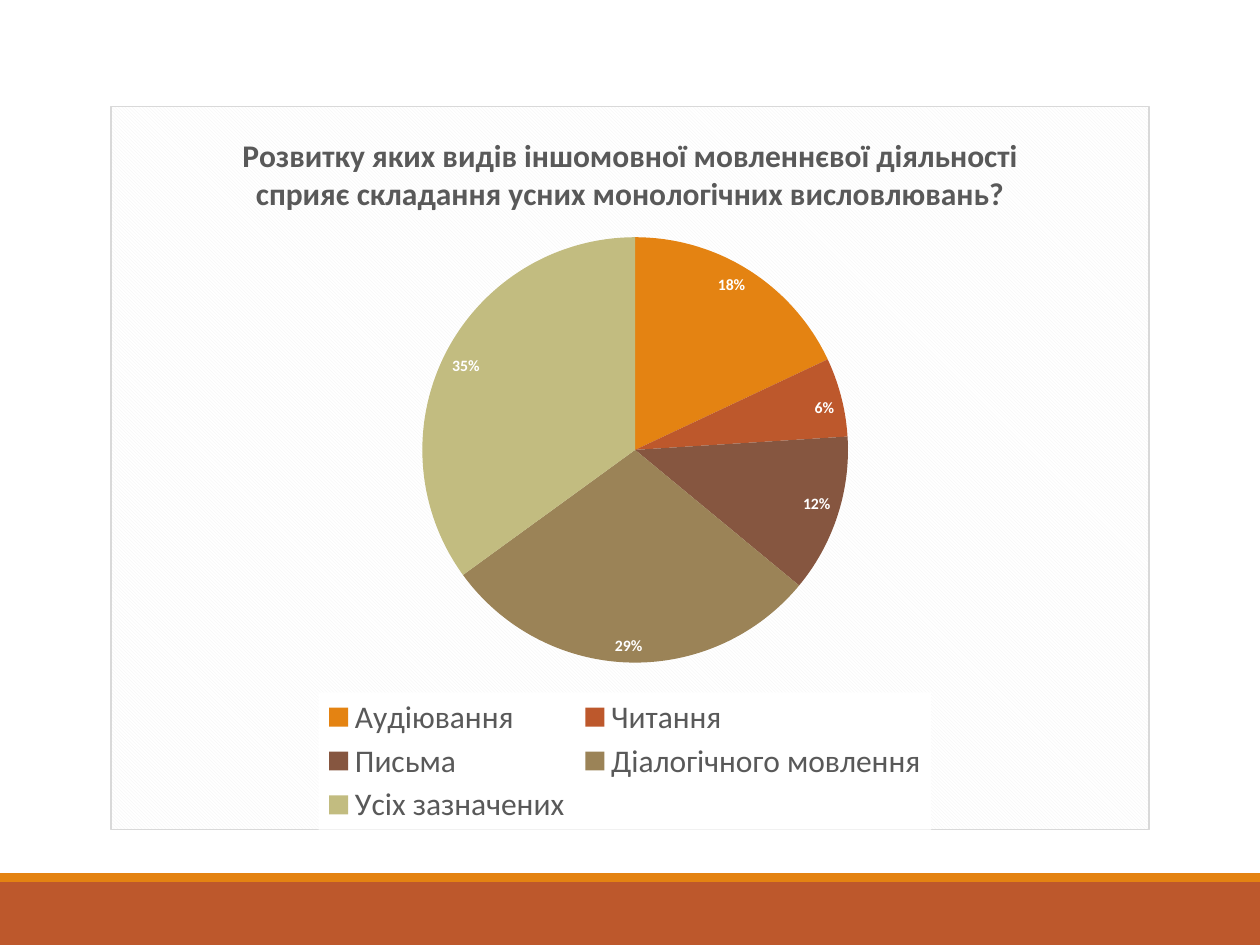
from lxml import etree
from pptx import Presentation
from pptx.chart.data import CategoryChartData
from pptx.dml.color import RGBColor
from pptx.enum.chart import XL_CHART_TYPE, XL_LABEL_POSITION, XL_LEGEND_POSITION
from pptx.enum.shapes import MSO_SHAPE
from pptx.oxml import parse_xml
from pptx.oxml.ns import nsdecls, qn
from pptx.util import Pt

PIE = XL_CHART_TYPE.PIE
INSIDE_END = XL_LABEL_POSITION.INSIDE_END
BOTTOM = XL_LEGEND_POSITION.BOTTOM
RECT = MSO_SHAPE.RECTANGLE

FONT = "Calibri"
COLORS = {
    "rust": "BD582C", "orange": "E48312", "brown": "865640",
    "tan": "9B8357", "olive": "C2BC80", "text": "595959",
    "border": "D9D9D9", "hatch": "F2F2F2", "white": "FFFFFF", "black": "000000",
}
TITLE = ("Розвитку яких видів іншомовної мовленнєвої діяльності "
         "сприяє складання усних монологічних висловлювань?")
SLICES = [
    ("Аудіювання", 18, "orange"),
    ("Читання", 6, "rust"),
    ("Письма", 12, "brown"),
    ("Діалогічного мовлення", 29, "tan"),
    ("Усіх зазначених", 35, "olive"),
]


def rgb(name):
    return RGBColor.from_string(COLORS[name])


def format_font(font, size, color, bold=False):
    for key, value in {"name": FONT, "size": Pt(size), "bold": bold}.items():
        setattr(font, key, value)
    font.color.rgb = rgb(color)


def set_layout(element, index, **fractions):
    """Place a chart part by fractions of the chart area."""
    for old in element.findall(qn("c:layout")):
        element.remove(old)
    layout = etree.Element(qn("c:layout"))
    manual = etree.SubElement(layout, qn("c:manualLayout"))
    if element.tag == qn("c:plotArea"):
        etree.SubElement(manual, qn("c:layoutTarget"), val="inner")
    for key in ("x", "y"):
        etree.SubElement(manual, qn(f"c:{key}Mode"), val="edge")
    for key, value in fractions.items():
        etree.SubElement(manual, qn(f"c:{key}"), val=str(value))
    element.insert(index, layout)


def shape_properties(content):
    return parse_xml(f'<c:spPr {nsdecls("c", "a")}>{content}</c:spPr>')


def solid(name):
    return f'<a:solidFill><a:srgbClr val="{COLORS[name]}"/></a:solidFill>'


def add_footer(s, x, y, w, h):
    stripe = 5
    for color, top, height in (("rust", y + stripe, h - stripe), ("orange", y, stripe)):
        sp = s.shapes.add_shape(RECT, Pt(x), Pt(top), Pt(w), Pt(height))
        sp.shadow.inherit = False
        sp.fill.solid()
        sp.fill.fore_color.rgb = rgb(color)
        sp.line.fill.background()


def add_pie(s, x, y, w, h):
    data = CategoryChartData()
    data.categories = [name for name, _, _ in SLICES]
    data.add_series("Series 1", [value for _, value, _ in SLICES])
    chart = s.shapes.add_chart(PIE, Pt(x), Pt(y), Pt(w), Pt(h), data).chart
    format_font(chart.font, 10, "black")

    # Hatched background with a thin border
    chart.element.find(qn("c:chart")).addnext(shape_properties(
        '<a:pattFill prst="dkDnDiag">'
        f'<a:fgClr><a:srgbClr val="{COLORS["hatch"]}"/></a:fgClr>'
        f'<a:bgClr><a:srgbClr val="{COLORS["white"]}"/></a:bgClr></a:pattFill>'
        f'<a:ln w="{Pt(0.75)}">{solid("border")}</a:ln>'))

    # Title
    chart.has_title = True
    p = chart.chart_title.text_frame.paragraphs[0]
    r = p.add_run()
    r.text = TITLE
    format_font(r.font, 18, "text", bold=True)

    # Slices and percentages
    plot = chart.plots[0]
    plot.vary_by_categories = True
    for i, (_, _, color) in enumerate(SLICES):
        fmt = plot.series[0].points[i].format
        fmt.fill.solid()
        fmt.fill.fore_color.rgb = rgb(color)
        fmt.line.fill.background()
    labels = plot.series[0].data_labels
    format_font(labels.font, 9, "white", bold=True)
    for key, value in {"show_percentage": True, "show_value": False,
                       "number_format": "0%", "number_format_is_linked": False,
                       "position": INSIDE_END}.items():
        setattr(labels, key, value)
    set_layout(chart.element.find(f".//{qn('c:plotArea')}"), 0,
               x=0.3, y=0.18, w=0.41, h=0.59)

    # Legend on a white panel
    chart.has_legend = True
    legend = chart.legend
    legend.position = BOTTOM
    legend.include_in_layout = False
    format_font(legend.font, 18, "text")
    element = chart.element.find(f".//{qn('c:legend')}")
    element.find(qn("c:txPr")).addprevious(shape_properties(solid("white")))
    set_layout(element, 1, x=0.2, y=0.81, w=0.59, h=0.19)


def main():
    prs = Presentation()
    prs.slide_width, prs.slide_height = Pt(720), Pt(540)
    s = prs.slides.add_slide(prs.slide_layouts[6])
    add_footer(s, 0, 499, 720, 41)
    add_pie(s, 63, 60.5, 594, 414)
    prs.save("out.pptx")


if __name__ == "__main__":
    main()
